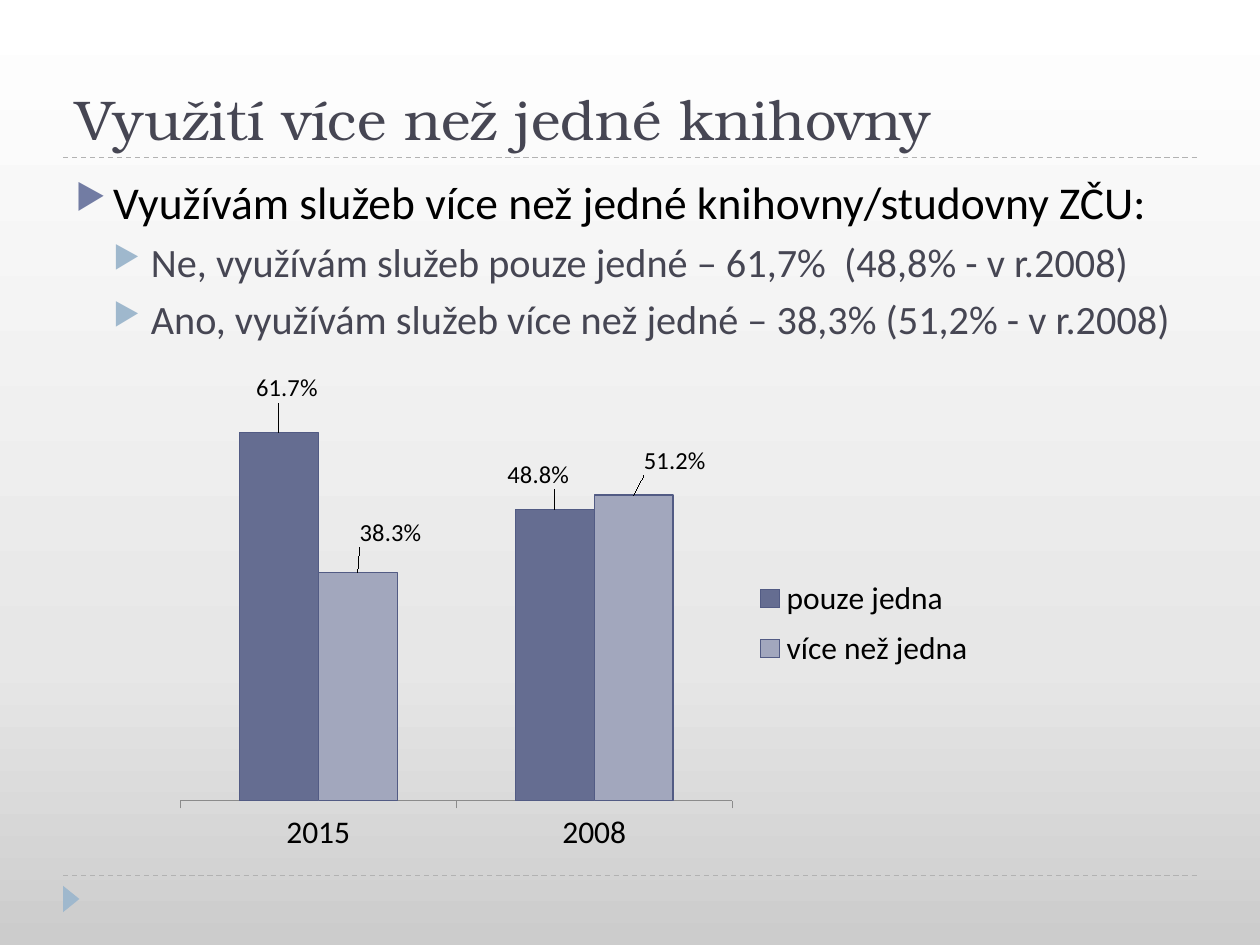
from copy import deepcopy

from lxml import etree
from pptx import Presentation
from pptx.chart.data import CategoryChartData
from pptx.dml.color import RGBColor
from pptx.enum.chart import (XL_CHART_TYPE, XL_LABEL_POSITION,
                             XL_LEGEND_POSITION, XL_TICK_MARK)
from pptx.enum.dml import MSO_LINE
from pptx.enum.shapes import MSO_CONNECTOR, MSO_SHAPE
from pptx.enum.text import MSO_ANCHOR
from pptx.oxml.ns import qn
from pptx.util import Inches, Pt

COLUMNS = XL_CHART_TYPE.COLUMN_CLUSTERED
OUTSIDE_END = XL_LABEL_POSITION.OUTSIDE_END
LEGEND_RIGHT = XL_LEGEND_POSITION.RIGHT
TICK_OUT, TICK_NONE = XL_TICK_MARK.OUTSIDE, XL_TICK_MARK.NONE
DASH = MSO_LINE.DASH
STRAIGHT = MSO_CONNECTOR.STRAIGHT
TRIANGLE = MSO_SHAPE.ISOSCELES_TRIANGLE
BOTTOM, TOP = MSO_ANCHOR.BOTTOM, MSO_ANCHOR.TOP

BLACK = RGBColor(0, 0, 0)
SLATE = RGBColor(0x46, 0x46, 0x53)
INDIGO = RGBColor(0x72, 0x7C, 0xA3)
SKY = RGBColor(0x9F, 0xB8, 0xCD)
RULE_GREY = RGBColor(0xB2, 0xB2, 0xB2)
AXIS_GREY = RGBColor(0x8B, 0x8B, 0x8B)
BAR_DARK = RGBColor(0x65, 0x6D, 0x91)
BAR_LIGHT = RGBColor(0xA2, 0xA7, 0xBD)
BAR_EDGE = RGBColor(0x52, 0x5B, 0x84)
BACKGROUND = [(0, RGBColor(0xCC, 0xCC, 0xCC)),
              (0.3, RGBColor(0xE7, 0xE7, 0xE7)),
              (1, RGBColor(0xFF, 0xFF, 0xFF))]

TITLE_FONT, BODY_FONT = "TeX Gyre Bonum", "Calibri"
LEVELS = [
    {"size": 26, "color": BLACK, "bullet": INDIGO, "before": 6},
    {"size": 23, "color": SLATE, "bullet": SKY, "before": 5},
]
BODY = [
    (0, "Využívám služeb více než jedné knihovny/studovny ZČU:"),
    (1, "Ne, využívám služeb pouze jedné – 61,7%  (48,8% - v r.2008)"),
    (1, "Ano, využívám služeb více než jedné – 38,3% (51,2% - v r.2008)"),
]
YEARS = ["2015", "2008"]
# Label shifts are fractions of the chart size, one (x, y) pair per year.
SERIES = [
    {"name": "pouze jedna", "values": (0.617, 0.488), "color": BAR_DARK,
     "shifts": [(0.01, -0.05), (-0.02, -0.03)]},
    {"name": "více než jedna", "values": (0.383, 0.512), "color": BAR_LIGHT,
     "shifts": [(0.04, -0.04), (0.05, -0.03)]},
]


def set_font(font, **values):
    for name, value in values.items():
        if name == "color":
            font.color.rgb = value
        else:
            setattr(font, name, value)


def paint_background(s):
    fill = s.background.fill
    fill.gradient()
    fill.gradient_angle = 90
    first = s.element.find(".//" + qn("a:gs"))
    first.addnext(deepcopy(first))
    for stop, (position, color) in zip(fill.gradient_stops, BACKGROUND):
        stop.position = position
        stop.color.rgb = color


def add_rule(s, left, top, width):
    line = s.shapes.add_connector(STRAIGHT, left, top, left + width, top)
    line.line.color.rgb = RULE_GREY
    line.line.width = Pt(0.75)
    line.line.dash_style = DASH
    etree.SubElement(line.element.spPr, qn("a:effectLst"))


def add_page_marker(s, left, top, width, height):
    marker = s.shapes.add_shape(TRIANGLE, left, top, width, height)
    marker.rotation = 90
    marker.shadow.inherit = False
    marker.fill.solid()
    marker.fill.fore_color.rgb = SKY
    marker.line.fill.background()


def add_text_frame(s, box, anchor):
    tf = s.shapes.add_textbox(*box).text_frame
    tf.word_wrap = True
    tf.vertical_anchor = anchor
    return tf


def add_title(s, *box):
    tf = add_text_frame(s, box, BOTTOM)
    r = tf.paragraphs[0].add_run()
    r.text = "Využití více než jedné knihovny"
    set_font(r.font, name=TITLE_FONT, size=Pt(32), color=SLATE)


def add_bullet(p, color):
    pPr = p._p.get_or_add_pPr()
    pPr.set("marL", str(Inches(0.3 * (p.level + 1))))
    pPr.set("indent", str(Inches(-0.3)))
    bu_color = etree.SubElement(pPr, qn("a:buClr"))
    etree.SubElement(bu_color, qn("a:srgbClr"), val=str(color))
    etree.SubElement(pPr, qn("a:buSzPct"), val="76000")
    etree.SubElement(pPr, qn("a:buChar"), char="▶")


def add_body(s, *box):
    tf = add_text_frame(s, box, TOP)
    for i, (level, text) in enumerate(BODY):
        style = LEVELS[level]
        p = tf.add_paragraph() if i else tf.paragraphs[0]
        p.level = level
        p.space_before = Pt(style["before"])
        add_bullet(p, style["bullet"])
        r = p.add_run()
        r.text = text
        set_font(r.font, name=BODY_FONT, size=Pt(style["size"]),
                 color=style["color"])


def make_layout(**values):
    """Return a manual chart layout holding the given c: elements."""
    layout = etree.Element(qn("c:layout"))
    manual = etree.SubElement(layout, qn("c:manualLayout"))
    for tag, value in values.items():
        etree.SubElement(manual, qn("c:" + tag), val=str(value))
    return layout


def style_series(series, style):
    series.format.fill.solid()
    series.format.fill.fore_color.rgb = style["color"]
    series.format.line.color.rgb = BAR_EDGE
    series.format.line.width = Pt(0.75)
    for i, (x, y) in enumerate(style["shifts"]):
        label = series.points[i].data_label
        set_font(label.font, name=BODY_FONT, size=Pt(14), color=BLACK)
        label.position = OUTSIDE_END
    labels = series.data_labels
    labels.show_value = True
    labels.number_format = "0.0%"
    labels.number_format_is_linked = False
    set_font(labels.font, name=BODY_FONT, size=Pt(14), color=BLACK)
    for dLbl, (x, y) in zip(series._element.iter(qn("c:dLbl")),
                            style["shifts"]):
        dLbl.find(qn("c:idx")).addnext(make_layout(x=x, y=y))


def add_usage_chart(s, *box):
    data = CategoryChartData(number_format="0.0%")
    data.categories = YEARS
    for style in SERIES:
        data.add_series(style["name"], style["values"])
    chart = s.shapes.add_chart(COLUMNS, *box, data).chart
    chart.has_title = False
    set_font(chart.font, name=BODY_FONT, size=Pt(18), color=BLACK)

    plot = chart.plots[0]
    plot.gap_width, plot.overlap = 150, 0
    plot.vary_by_categories = False
    for series, style in zip(plot.series, SERIES):
        style_series(series, style)

    chart.category_axis.major_tick_mark = TICK_OUT
    chart.category_axis.minor_tick_mark = TICK_NONE
    chart.category_axis.format.line.color.rgb = AXIS_GREY
    axis = chart.value_axis
    axis.minimum_scale, axis.maximum_scale = 0, 0.7
    axis.has_major_gridlines = False
    axis.tick_labels.number_format = "0.0%"
    axis.tick_labels.number_format_is_linked = False
    axis.visible = False

    chart.has_legend = True
    chart.legend.position = LEGEND_RIGHT
    chart.legend.include_in_layout = False
    legend = chart.legend._element
    for old in legend.findall(qn("c:layout")):
        legend.remove(old)
    legend.find(qn("c:legendPos")).addnext(
        make_layout(xMode="edge", yMode="edge", x=0.71, y=0.4, w=0.28, h=0.23))
    area = chart._chartSpace.find(".//" + qn("c:plotArea"))
    for old in area.findall(qn("c:layout")):
        area.remove(old)
    area.insert(0, make_layout(layoutTarget="inner", xMode="edge",
                               yMode="edge", x=0.02, y=0.02, w=0.67, h=0.86))


def main():
    prs = Presentation()
    prs.slide_width, prs.slide_height = Inches(10), Inches(7.5)
    s = prs.slides.add_slide(prs.slide_layouts[6])
    left, width = Inches(0.5), Inches(9)
    paint_background(s)
    for top in (6.95, 1.25):
        add_rule(s, left, Inches(top), width)
    add_page_marker(s, Inches(0.46), Inches(7.07), Inches(0.21), Inches(0.13))
    add_title(s, left, Inches(0.17), width, Inches(1.08))
    add_body(s, left, Inches(1.33), width, Inches(5.4))
    add_usage_chart(s, Inches(1.3), Inches(2.96), Inches(6.54), Inches(3.86))
    prs.save("out.pptx")


if __name__ == "__main__":
    main()
